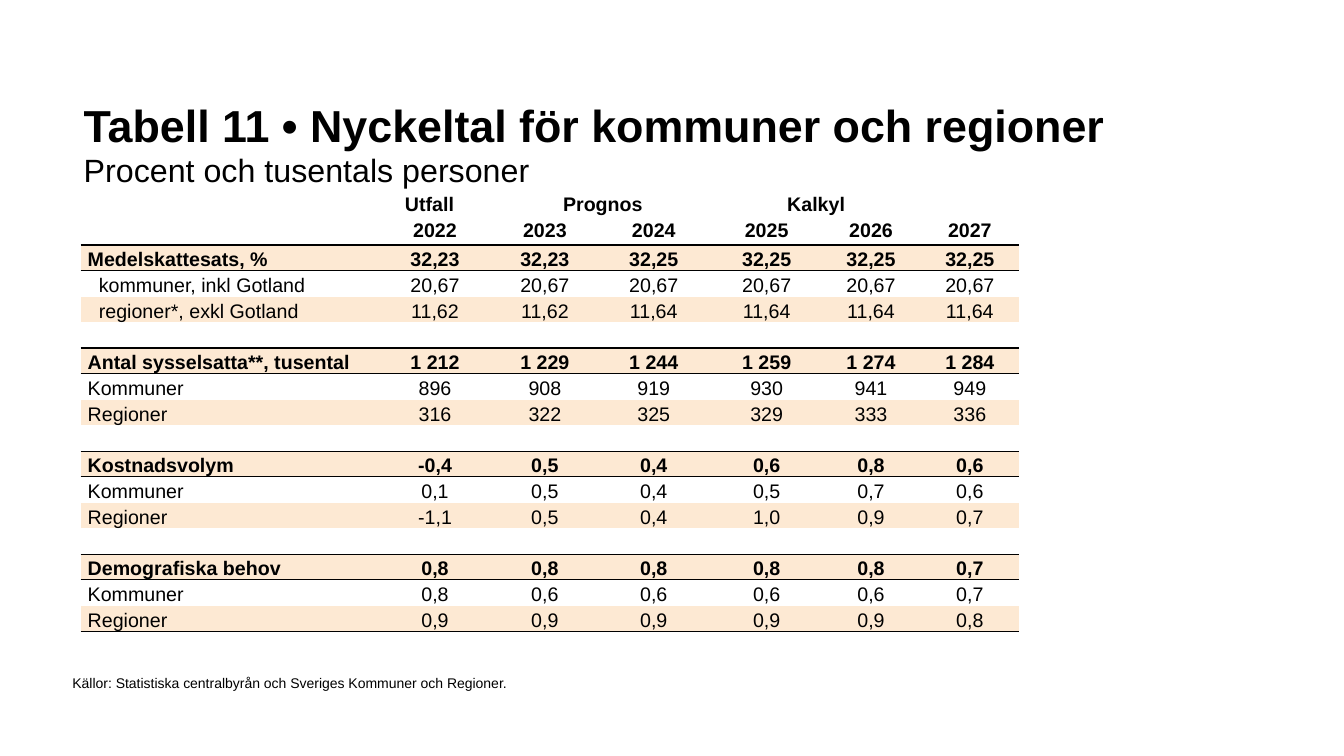
from dataclasses import dataclass

from lxml.etree import SubElement
from pptx import Presentation
from pptx.dml.color import RGBColor
from pptx.enum.text import MSO_ANCHOR as Anchor, MSO_AUTO_SIZE as AutoSize, PP_ALIGN as Align
from pptx.oxml.ns import qn
from pptx.util import Inches, Pt


@dataclass(frozen=True)
class Theme:
    font: str = "Arial"
    ink: str = "000000"
    band: str = "FDE9D3"
    title: int = 32
    subtitle: int = 23
    table: int = 14
    source: int = 10


theme = Theme()


def set_font(font, size, bold=False):
    font.name = theme.font
    font.size = Pt(size)
    font.bold = bold
    font.color.rgb = RGBColor.from_string(theme.ink)


def add_rule(cell, side):
    line = SubElement(cell._tc.get_or_add_tcPr(), qn(side), w=str(Pt(1)))
    fill = SubElement(line, qn("a:solidFill"))
    SubElement(fill, qn("a:srgbClr"), val=theme.ink)


deck = Presentation()
deck.slide_width = Inches(13.33)
deck.slide_height = Inches(7.5)
page = deck.slides.add_slide(deck.slide_layouts[5])

title = page.shapes.title
title.left, title.top = Inches(0.73), Inches(0.96)
title.width, title.height = Inches(10.51), Inches(1.35)
title.text_frame.auto_size = AutoSize.NONE
title.text_frame.vertical_anchor = Anchor.TOP
para = title.text_frame.paragraphs[0]
para.alignment = Align.LEFT
para.line_spacing = 0.95
heading = para.add_run()
heading.text = "Tabell 11 • Nyckeltal för kommuner och regioner"
set_font(heading.font, theme.title, True)
para.add_line_break()
subheading = para.add_run()
subheading.text = "Procent och tusentals personer"
set_font(subheading.font, theme.subtitle)

blank = [""] * 7
rows = [
    ["", "Utfall", "Prognos", "", "Kalkyl", "", ""],
    ["", "2022", "2023", "2024", "2025", "2026", "2027"],
    ["Medelskattesats, %", "32,23", "32,23", "32,25", "32,25", "32,25", "32,25"],
    ["kommuner, inkl Gotland", "20,67", "20,67", "20,67", "20,67", "20,67", "20,67"],
    ["regioner*, exkl Gotland", "11,62", "11,62", "11,64", "11,64", "11,64", "11,64"],
    blank,
    ["Antal sysselsatta**, tusental", "1 212", "1 229", "1 244", "1 259", "1 274", "1 284"],
    ["Kommuner", "896", "908", "919", "930", "941", "949"],
    ["Regioner", "316", "322", "325", "329", "333", "336"],
    blank,
    ["Kostnadsvolym", "-0,4", "0,5", "0,4", "0,6", "0,8", "0,6"],
    ["Kommuner", "0,1", "0,5", "0,4", "0,5", "0,7", "0,6"],
    ["Regioner", "-1,1", "0,5", "0,4", "1,0", "0,9", "0,7"],
    blank,
    ["Demografiska behov", "0,8", "0,8", "0,8", "0,8", "0,8", "0,7"],
    ["Kommuner", "0,8", "0,6", "0,6", "0,6", "0,6", "0,7"],
    ["Regioner", "0,9", "0,9", "0,9", "0,9", "0,9", "0,8"],
]
widths = [2.93, 1.17, 1.01, 1.15, 1.09, 0.98, 0.98]
last_row = len(rows) - 1

table = page.shapes.add_table(
    len(rows), len(widths), Inches(0.8), Inches(1.92), Inches(sum(widths)), Inches(4.35)
).table
table.first_row = False
table.horz_banding = False
table._tbl.tblPr.find(qn("a:tableStyleId")).text = "{2D5ABB26-0587-4C30-8999-92F81FD0307C}"
for column, width in zip(table.columns, widths):
    column.width = Inches(width)

for row, texts in enumerate(rows):
    header = row < 2
    group_head = row % 4 == 2
    for column, text in enumerate(texts):
        cell = table.cell(row, column)
        cell.margin_left = cell.margin_right = Inches(0.07)
        cell.margin_top = cell.margin_bottom = 0
        cell.vertical_anchor = Anchor.MIDDLE if header else Anchor.BOTTOM
        if group_head:
            add_rule(cell, "a:lnT")
        if row % 4 == 1 or row == last_row:
            add_rule(cell, "a:lnB")
        if row % 2 == 0 and not header:
            cell.fill.solid()
            cell.fill.fore_color.rgb = RGBColor.from_string(theme.band)
        else:
            cell.fill.background()
        cell.text = text
        para = cell.text_frame.paragraphs[0]
        para.alignment = Align.CENTER if column else Align.LEFT
        para.line_spacing = Pt(13)
        para.space_after = Pt(1)
        set_font(para.font, theme.table, header or group_head)

table.cell(0, 1).margin_right = Inches(0.18)
for row in (3, 4):
    table.cell(row, 0).margin_left = Inches(0.18)
for column in (2, 4):
    table.cell(0, column).merge(table.cell(0, column + 1))

source = page.shapes.add_textbox(Inches(0.62), Inches(6.64), Inches(6.67), Inches(0.27))
source.text_frame.word_wrap = True
source.text_frame.auto_size = AutoSize.SHAPE_TO_FIT_TEXT
para = source.text_frame.paragraphs[0]
para.text = "Källor: Statistiska centralbyrån och Sveriges Kommuner och Regioner."
set_font(para.font, theme.source)

deck.save("out.pptx")
